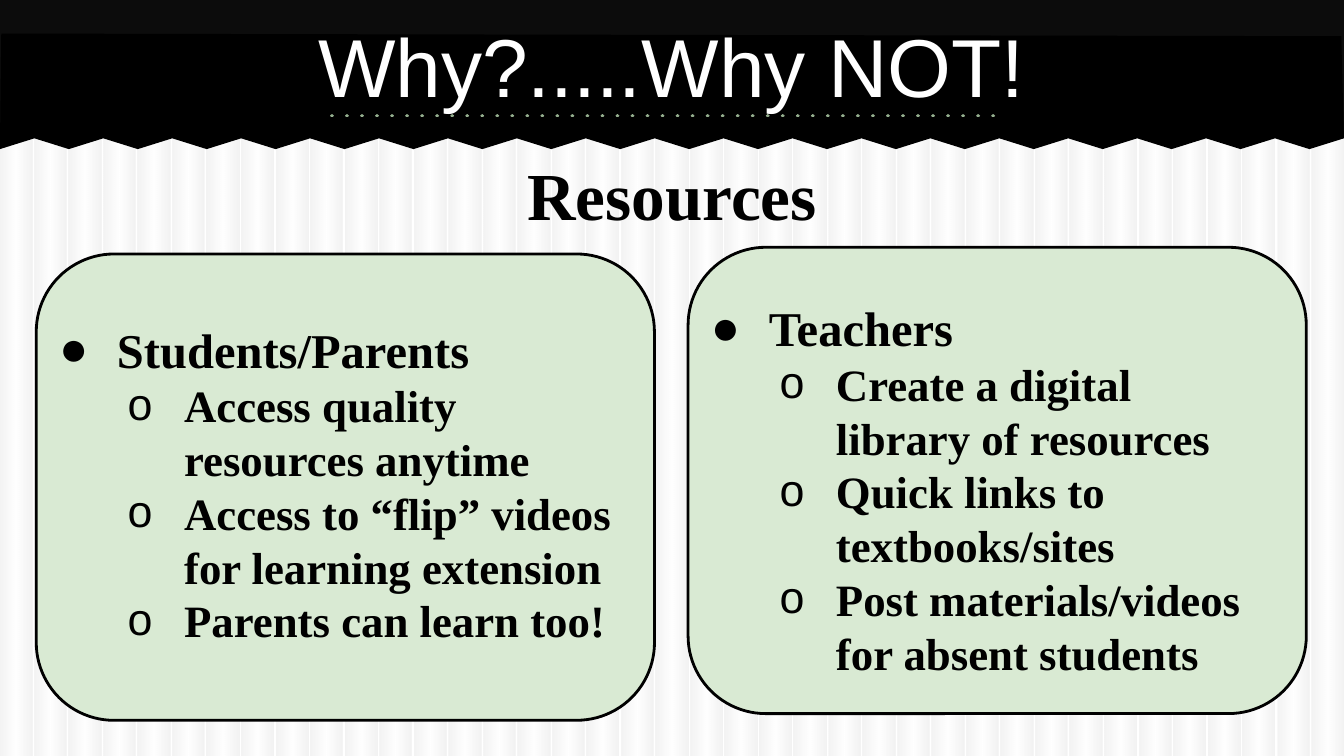
"""Build the "Why?.....Why NOT!" resources slide."""
import lxml.etree
import pptx
import pptx.dml.color
import pptx.enum.shapes
import pptx.enum.text
import pptx.oxml
import pptx.oxml.ns
import pptx.util

RGBColor = pptx.dml.color.RGBColor
BLACK = RGBColor(0x00, 0x00, 0x00)
WHITE = RGBColor(0xFF, 0xFF, 0xFF)
CHARCOAL = RGBColor(0x0C, 0x0C, 0x0C)
SAGE = RGBColor(0x94, 0xAE, 0x8E)
MINT = RGBColor(0xD9, 0xEA, 0xD3)
STRIPE_GREY = RGBColor(0xBF, 0xBF, 0xBF)

TITLE = "Why?.....Why NOT!"
SUBTITLE = "Resources"
PANELS = [
    {
        "card": (0.27, 1.89),
        "list": (0.27, 2.28, 4.44, 3.33),
        "lines": [
            "Students/Parents",
            "Access quality resources anytime",
            "Access to “flip” videos for learning extension",
            "Parents can learn too!",
        ],
    },
    {
        "card": (5.12, 1.84),
        "list": (5.12, 2.12, 4.38, 3.24),
        "lines": [
            "Teachers",
            "Create a digital library of resources",
            "Quick links to textbooks/sites",
            "Post materials/videos for absent students",
        ],
    },
]
LEVELS = [
    {"size": 26, "bullet": "●", "margin": 0.5, "indent": -0.43},
    {"size": 24, "bullet": "o", "margin": 1, "indent": -0.42},
]
WIDTH = 10
HEIGHT = WIDTH * 9 / 16
CARD_SIZE = (4.6, 3.47)
STRIPES, STRIPE_WIDTH, LAST_STRIPE = 39, 0.24, 9.76
STRIPE_STOPS = [(0, STRIPE_GREY), (50, WHITE), (97, STRIPE_GREY), (100, STRIPE_GREY)]
TEETH, TOOTH_TOP, TOOTH_BOTTOM = 39, 1.03, 1.11
SERIF = "Times New Roman"


def inches(*lengths):
    return [pptx.util.Inches(length) for length in lengths]


def add_child(parent, tag, **attributes):
    name = pptx.oxml.ns.qn(tag)
    return lxml.etree.SubElement(parent, name, attributes)


def paint(shape, color, outline=None):
    shape.shadow.inherit = False
    if color is not None:
        shape.fill.solid()
        shape.fill.fore_color.rgb = color
    if outline is None:
        shape.line.fill.background()
    else:
        shape.line.color.rgb = outline
        shape.line.width = pptx.util.Pt(1.5)


def add_box(slide, kind, box, color, outline=None):
    shape = slide.shapes.add_shape(kind, *inches(*box))
    paint(shape, color, outline)
    return shape


def add_stripes(slide):
    kind = pptx.enum.shapes.MSO_SHAPE.RECTANGLE
    for index in range(STRIPES):
        left = LAST_STRIPE * index / (STRIPES - 1)
        stripe = add_box(slide, kind, (left, 0.01, STRIPE_WIDTH, HEIGHT), None)
        stripe.fill.gradient()
        stripe.fill.gradient_angle = 0
        stops = stripe.element.spPr.find(".//" + pptx.oxml.ns.qn("a:gsLst"))
        for stop in list(stops):
            stops.remove(stop)
        for position, color in STRIPE_STOPS:
            stop = add_child(stops, "a:gs", pos=str(position * 1000))
            tint = add_child(stop, "a:srgbClr", val=str(color))
            add_child(tint, "a:alpha", val="19000")


def add_banner(slide):
    kind = pptx.enum.shapes.MSO_SHAPE.RECTANGLE
    add_box(slide, kind, (0, 0, WIDTH, 1.02), CHARCOAL)
    teeth = [
        (WIDTH * index / TEETH, TOOTH_TOP if index % 2 else TOOTH_BOTTOM)
        for index in range(TEETH, -1, -1)
    ]
    points = [inches(*point) for point in [(9.98, 0.27)] + teeth]
    builder = slide.shapes.build_freeform(*inches(0.01, 0.25))
    builder.add_line_segments(points, close=True)
    paint(builder.convert_to_shape(), BLACK)

    straight = pptx.enum.shapes.MSO_CONNECTOR.STRAIGHT
    rule = slide.shapes.add_connector(straight, *inches(2.47, 0.86, 7.5, 0.86))
    rule.line.color.rgb = SAGE
    rule.line.width = pptx.util.Pt(2)
    outline = rule.element.spPr.find(pptx.oxml.ns.qn("a:ln"))
    outline.set("cap", "rnd")
    add_child(outline, "a:prstDash", val="dot")
    add_child(rule.element.spPr, "a:effectLst")


def place(placeholder, box, anchor):
    placeholder.left, placeholder.top, placeholder.width, placeholder.height = inches(*box)
    placeholder.element.getparent().append(placeholder.element)
    frame = placeholder.text_frame
    frame.word_wrap = True
    frame.auto_size = pptx.enum.text.MSO_AUTO_SIZE.NONE
    frame.vertical_anchor = anchor
    frame.margin_left = frame.margin_right = pptx.util.Inches(0.1)
    frame.margin_top = frame.margin_bottom = pptx.util.Inches(0.1)
    return frame


def style(paragraph, size, font, color, bold):
    paragraph.line_spacing = 1.0
    paragraph.space_before = paragraph.space_after = pptx.util.Pt(0)
    for run in paragraph.runs:
        run.font.size = pptx.util.Pt(size)
        run.font.name = font
        run.font.color.rgb = color
        run.font.bold = bold


def indent(paragraph, margin, first_line):
    properties = paragraph._p.get_or_add_pPr()
    properties.set("marL", str(pptx.util.Inches(margin)))
    properties.set("indent", str(pptx.util.Inches(first_line)))
    return properties


def fill_heading(placeholder, text, box, anchor, size, font, color, bold):
    frame = place(placeholder, box, anchor)
    frame.text = text
    paragraph = frame.paragraphs[0]
    style(paragraph, size, font, color, bold)
    paragraph.alignment = pptx.enum.text.PP_ALIGN.CENTER
    add_child(indent(paragraph, 0, 0), "a:buNone")


def fill_list(placeholder, lines, box):
    frame = place(placeholder, box, pptx.enum.text.MSO_ANCHOR.TOP)
    frame.text = "\n".join(lines)
    for index, paragraph in enumerate(frame.paragraphs):
        paragraph.level = min(index, 1)
        level = LEVELS[paragraph.level]
        style(paragraph, level["size"], SERIF, BLACK, True)
        properties = indent(paragraph, level["margin"], level["indent"])
        bullet_color = add_child(properties, "a:buClr")
        add_child(bullet_color, "a:srgbClr", val=str(BLACK))
        add_child(properties, "a:buFont", typeface="Arial")
        add_child(properties, "a:buChar", char=level["bullet"])


def main():
    presentation = pptx.Presentation()
    presentation.slide_width, presentation.slide_height = inches(WIDTH, HEIGHT)
    slide = presentation.slides.add_slide(presentation.slide_layouts[4])
    title, subtitle, left_list, spare, right_list = slide.placeholders
    spare.element.getparent().remove(spare.element)

    add_stripes(slide)
    add_banner(slide)
    anchors = pptx.enum.text.MSO_ANCHOR
    fill_heading(title, TITLE, (0.5, 0.01, 9, 0.94), anchors.MIDDLE, 44, "Arial", WHITE, False)
    fill_heading(subtitle, SUBTITLE, (0.32, 1.04, 9.36, 0.94), anchors.TOP, 36, SERIF, BLACK, True)
    for panel, placeholder in zip(PANELS, (left_list, right_list)):
        kind = pptx.enum.shapes.MSO_SHAPE.ROUNDED_RECTANGLE
        add_box(slide, kind, panel["card"] + CARD_SIZE, MINT, BLACK)
        fill_list(placeholder, panel["lines"], panel["list"])
    presentation.save("out.pptx")


if __name__ == "__main__":
    main()
